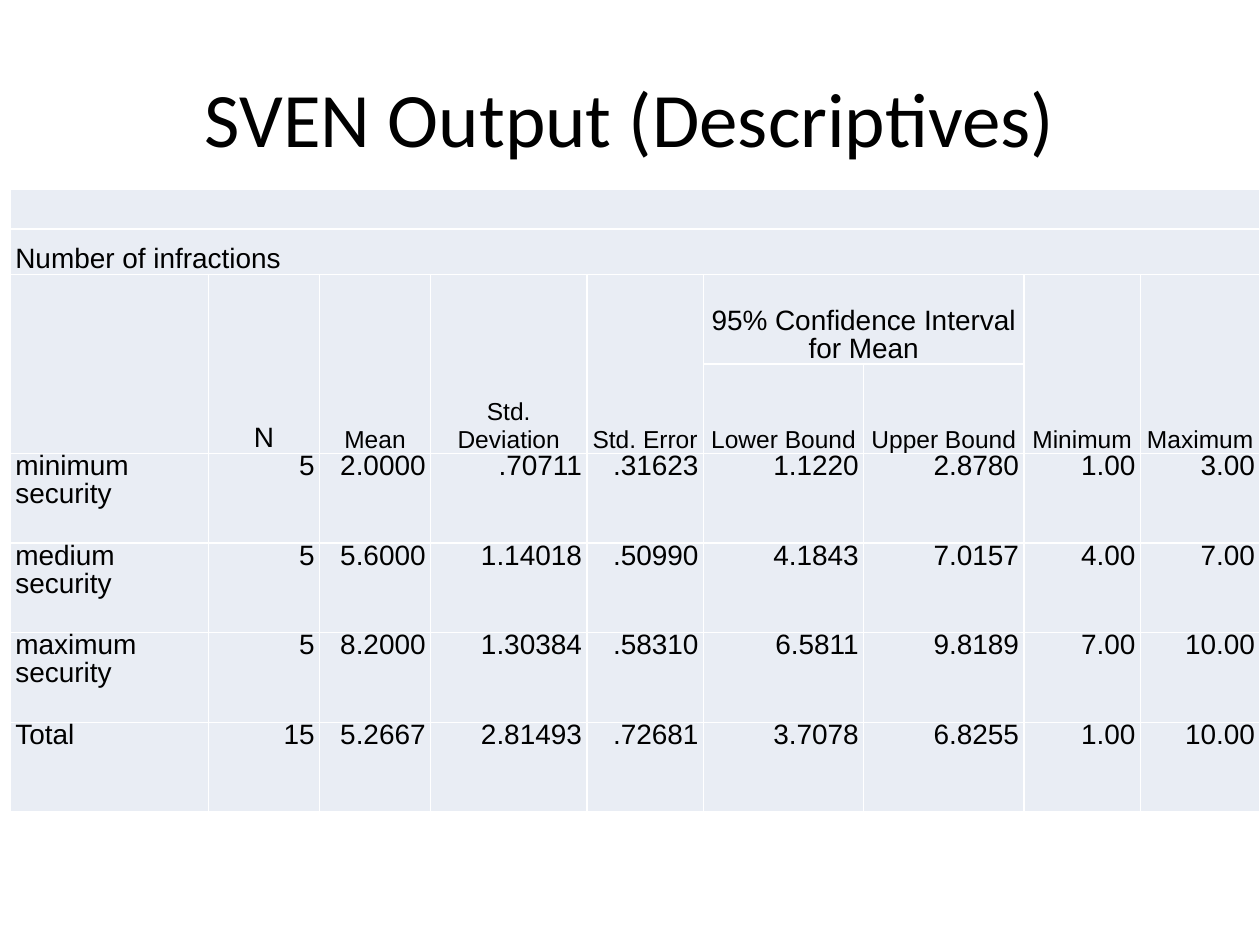
from dataclasses import dataclass

from lxml.etree import SubElement
from pptx import Presentation
from pptx.dml.color import RGBColor
from pptx.enum.text import MSO_ANCHOR as Anchor, PP_ALIGN as Align
from pptx.oxml.ns import qn
from pptx.util import Cm, Pt


@dataclass(frozen=True)
class Theme:
    """Colours, fonts and type sizes of the deck."""
    ink: str = "000000"
    cell: str = "E9EDF4"
    rule: str = "FFFFFF"
    title_font: str = "Calibri"
    table_font: str = "Arial"
    title_size: int = 44
    body_size: int = 16
    label_size: int = 14


@dataclass(frozen=True)
class Box:
    """A region of the page in centimetres."""
    left: float
    top: float
    width: float
    height: float

    def lengths(self):
        """Return the region as slide lengths."""
        return [Cm(value) for value in (self.left, self.top, self.width, self.height)]


THEME = Theme()
TITLE_BOX = Box(1.27, 0.76, 22.86, 3.18)
TABLE_BOX = Box(0.21, 3.82, 25.19, 12.55)
COLUMN_WIDTHS = [3.99, 2.24, 2.24, 3.15, 2.35, 3.23, 3.23, 2.35, 2.41]
TOP_ROW_HEIGHTS = [0.8, 0.91]
ROW_COUNT = 8
TITLE = "SVEN Output (Descriptives)"
CAPTION = "Number of infractions"
INTERVAL = "95% Confidence Interval for Mean"
HEADINGS = ["", "N", "Mean", "Std. Deviation", "Std. Error",
            "Lower Bound", "Upper Bound", "Minimum", "Maximum"]
INTERVAL_COLUMNS = (5, 6)
RECORDS = [
    ["minimum security", "5", "2.0000", ".70711", ".31623", "1.1220", "2.8780", "1.00", "3.00"],
    ["medium security", "5", "5.6000", "1.14018", ".50990", "4.1843", "7.0157", "4.00", "7.00"],
    ["maximum security", "5", "8.2000", "1.30384", ".58310", "6.5811", "9.8189", "7.00", "10.00"],
    ["Total", "15", "5.2667", "2.81493", ".72681", "3.7078", "6.8255", "1.00", "10.00"],
]


def apply_format(target, values):
    """Set each named attribute on the target."""
    for name, value in values.items():
        setattr(target, name, value)


def write_text(para, text, font, size, align):
    """Write one styled span into a paragraph."""
    para.alignment = align
    span = para.add_run()
    span.text = text
    apply_format(span.font, {"name": font, "size": Pt(size)})
    span.font.color.rgb = RGBColor.from_string(THEME.ink)


def add_title(page, box):
    """Place the slide title in its box."""
    frame = page.shapes.add_textbox(*box.lengths()).text_frame
    apply_format(frame, {"word_wrap": True, "vertical_anchor": Anchor.MIDDLE})
    write_text(frame.paragraphs[0], TITLE, THEME.title_font, THEME.title_size, Align.CENTER)


def style_cell(cell):
    """Give a cell its rules, fill and empty margins."""
    properties = cell._tc.get_or_add_tcPr()
    for side in ("lnL", "lnR", "lnT", "lnB"):
        line = SubElement(properties, qn(f"a:{side}"), w=str(Pt(1)))
        fill = SubElement(line, qn("a:solidFill"))
        SubElement(fill, qn("a:srgbClr"), val=THEME.rule)
    cell.fill.solid()
    cell.fill.fore_color.rgb = RGBColor.from_string(THEME.cell)
    apply_format(cell, dict.fromkeys(
        ("margin_left", "margin_right", "margin_top", "margin_bottom"), 0))


def write_cell(cell, text, align=Align.LEFT, anchor=Anchor.TOP, size=THEME.body_size):
    """Write indented text into a cell."""
    cell.vertical_anchor = anchor
    para = cell.text_frame.paragraphs[0]
    para.line_spacing = Pt(THEME.body_size)
    for side in ("marL", "marR"):
        para._p.get_or_add_pPr().set(side, str(Cm(0.1)))
    write_text(para, text, THEME.table_font, size, align)


def write_header(table):
    """Merge and fill the caption and heading rows."""
    last = len(HEADINGS) - 1
    for row in (0, 1):
        table.cell(row, 0).merge(table.cell(row, last))
    write_cell(table.cell(1, 0), CAPTION, anchor=Anchor.BOTTOM)
    first, final = INTERVAL_COLUMNS
    table.cell(2, first).merge(table.cell(2, final))
    write_cell(table.cell(2, first), INTERVAL, Align.CENTER, Anchor.BOTTOM)
    for column, heading in enumerate(HEADINGS):
        row = 3 if column in INTERVAL_COLUMNS else 2
        if row == 2:
            table.cell(2, column).merge(table.cell(3, column))
        if heading:
            size = THEME.body_size if heading == "N" else THEME.label_size
            write_cell(table.cell(row, column), heading, Align.CENTER, Anchor.BOTTOM, size)


def add_descriptives(page, box):
    """Place the descriptives table in its box."""
    table = page.shapes.add_table(ROW_COUNT, len(HEADINGS), *box.lengths()).table
    apply_format(table, {"first_row": False, "horz_banding": False})
    for column, width in zip(table.columns, COLUMN_WIDTHS):
        column.width = Cm(width)
    even_count = ROW_COUNT - len(TOP_ROW_HEIGHTS)
    even_height = (box.height - sum(TOP_ROW_HEIGHTS)) / even_count
    for row, height in zip(table.rows, TOP_ROW_HEIGHTS + [even_height] * even_count):
        row.height = Cm(height)
    for cell in table.iter_cells():
        style_cell(cell)
    write_header(table)
    for row, record in enumerate(RECORDS, start=4):
        for column, text in enumerate(record):
            write_cell(table.cell(row, column), text, Align.RIGHT if column else Align.LEFT)


def main():
    """Build and save the deck."""
    deck = Presentation()
    apply_format(deck, {"slide_width": Cm(25.4), "slide_height": Cm(19.05)})
    page = deck.slides.add_slide(deck.slide_layouts[6])
    add_title(page, TITLE_BOX)
    add_descriptives(page, TABLE_BOX)
    deck.save("out.pptx")


if __name__ == "__main__":
    main()
